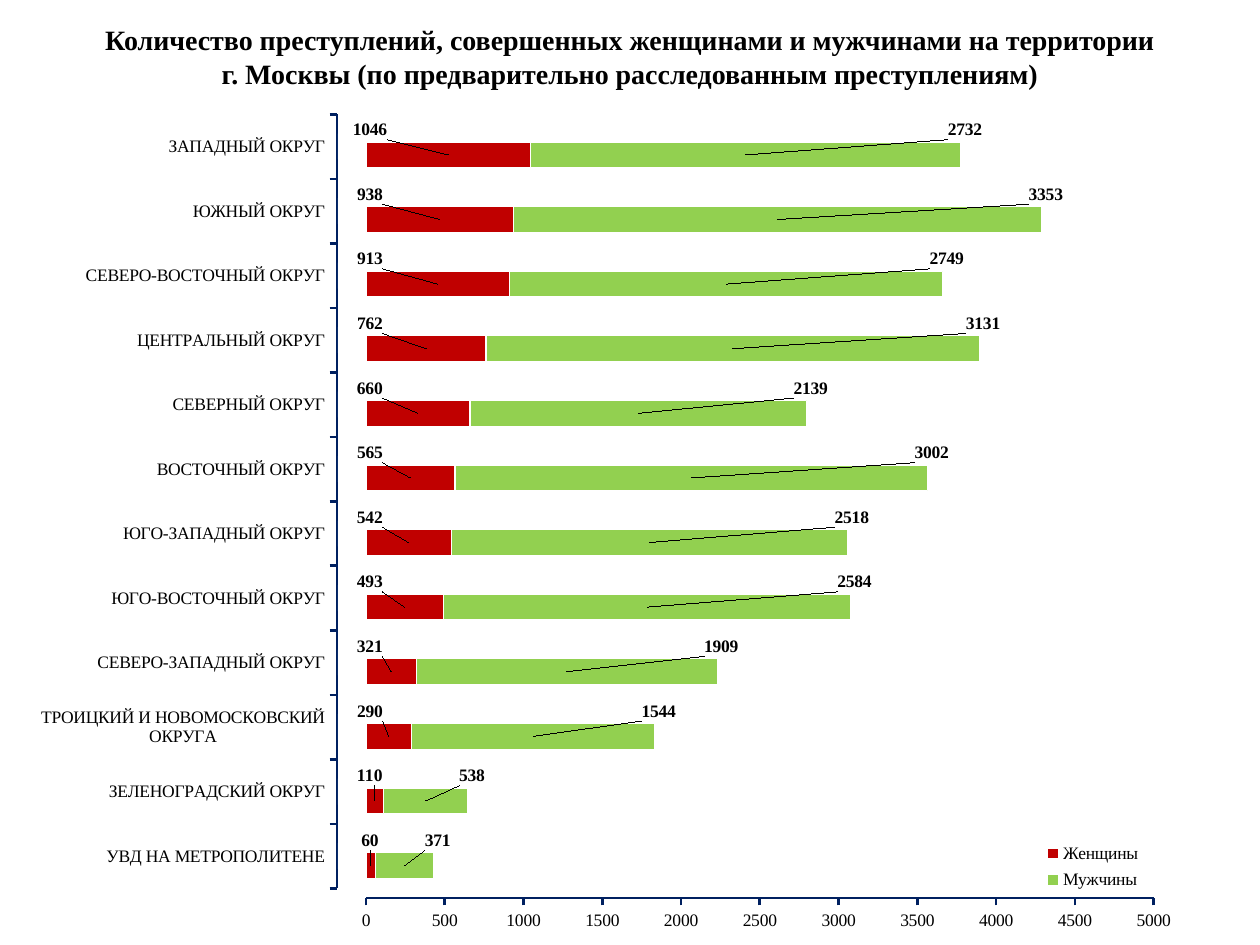
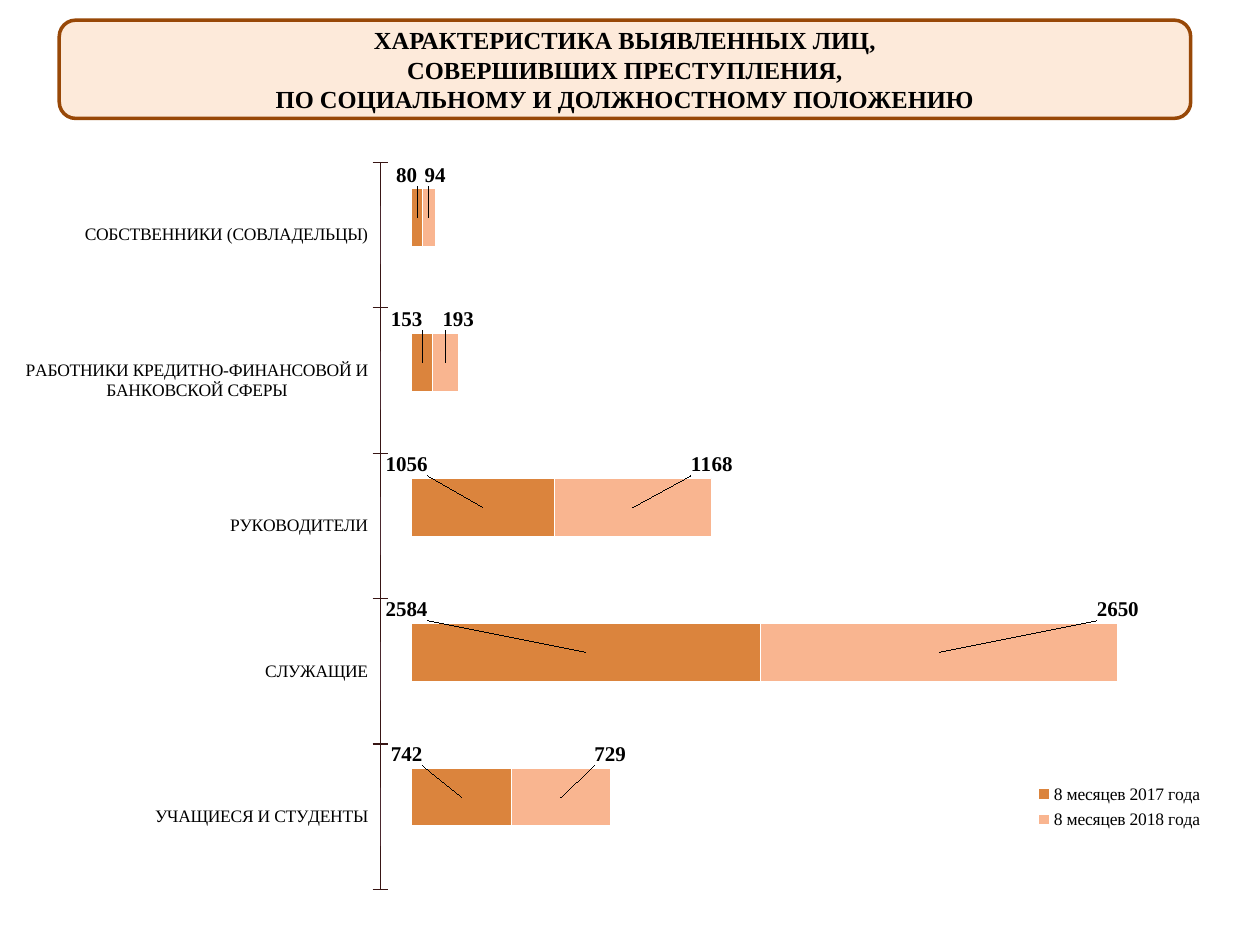
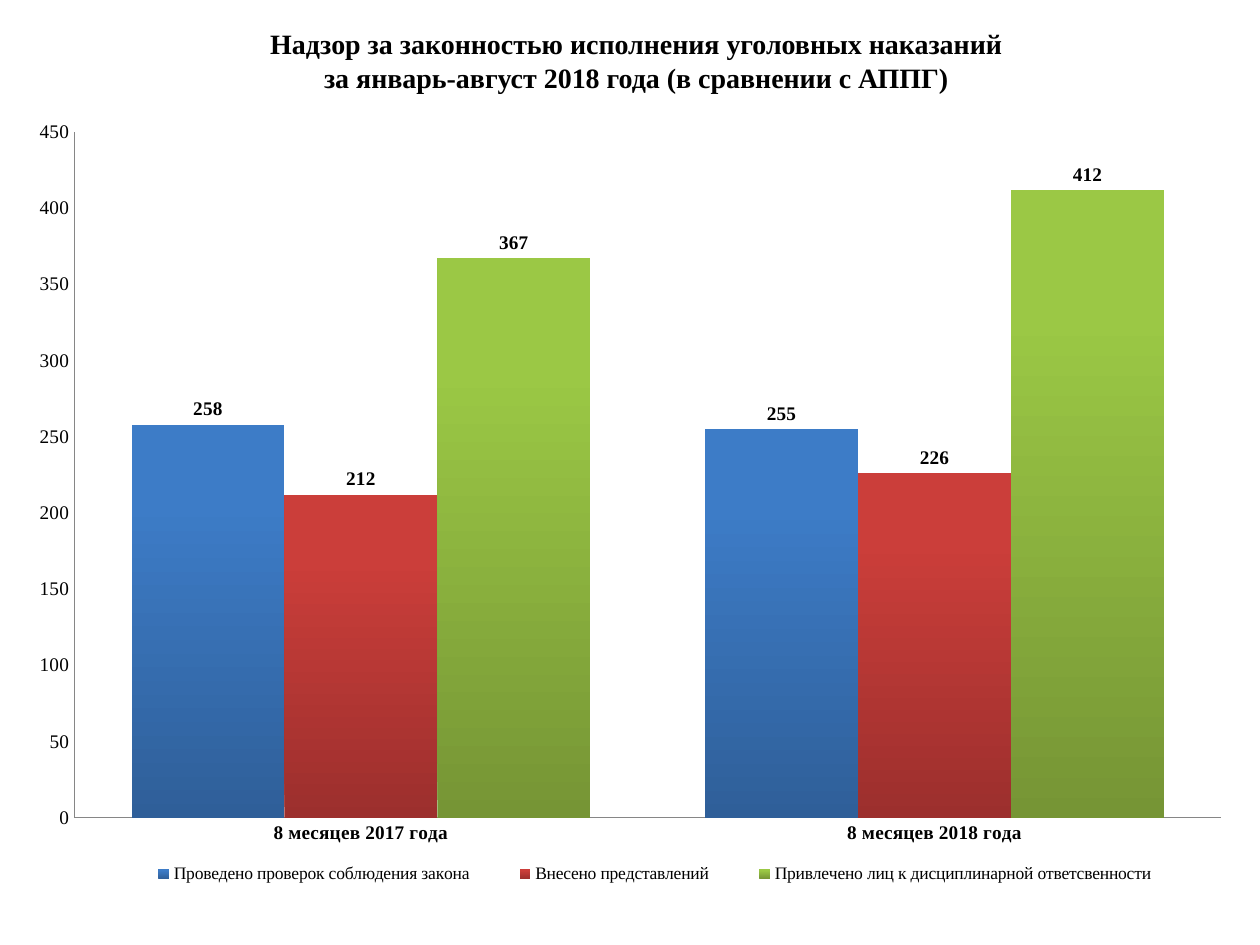
from dataclasses import dataclass

from lxml import etree
from pptx import Presentation
from pptx.chart.data import CategoryChartData
from pptx.dml.color import RGBColor
from pptx.enum.chart import XL_CHART_TYPE, XL_LABEL_POSITION, XL_LEGEND_POSITION, XL_TICK_MARK
from pptx.enum.shapes import MSO_SHAPE
from pptx.enum.text import MSO_ANCHOR, MSO_AUTO_SIZE, PP_ALIGN
from pptx.util import Pt

STACKED = XL_CHART_TYPE.BAR_STACKED
BARS = XL_CHART_TYPE.BAR_CLUSTERED
COLUMNS = XL_CHART_TYPE.COLUMN_CLUSTERED
OUT, CROSS, NO_TICK = XL_TICK_MARK.OUTSIDE, XL_TICK_MARK.CROSS, XL_TICK_MARK.NONE
RIGHT, BOTTOM = XL_LEGEND_POSITION.RIGHT, XL_LEGEND_POSITION.BOTTOM
ABOVE = XL_LABEL_POSITION.OUTSIDE_END
ROUND = MSO_SHAPE.ROUNDED_RECTANGLE
CENTER, TOP, MIDDLE = PP_ALIGN.CENTER, MSO_ANCHOR.TOP, MSO_ANCHOR.MIDDLE
NO_FIT = MSO_AUTO_SIZE.NONE

SCALE = 9144  # EMU in one px, 100 px to the inch
C = "http://schemas.openxmlformats.org/drawingml/2006/chart"
A = "http://schemas.openxmlformats.org/drawingml/2006/main"


@dataclass(frozen=True)
class Theme:
    font: str = "Times New Roman"
    ink: str = "000000"
    white: str = "FFFFFF"
    navy: str = "002060"
    brown: str = "381514"
    gray: str = "868686"
    box: str = "FDEADA"
    edge: str = "984807"
    sexes: tuple = ("C00000", "92D050")
    years: tuple = ("DB843D", "F9B590")
    acts: tuple = (("2F5F99", "3D7CC7"), ("9C2F2D", "CB3E3A"), ("769535", "9BC845"))
    title: int = 16
    head: int = 14
    large: int = 12
    mid: int = 11
    small: int = 10


def px(n):
    return round(n * SCALE)


def color(code):
    return RGBColor.from_string(code)


def layout(x, y, w=None, h=None, inner=False):
    """Manual layout: a place and size, or an offset when no size is given."""
    root = etree.Element(f"{{{C}}}layout", nsmap={"c": C})
    box = etree.SubElement(root, f"{{{C}}}manualLayout")
    vals = {"layoutTarget": "inner"} if inner else {}
    if w is None:
        vals.update(x=x, y=y)
    else:
        vals.update(xMode="edge", yMode="edge", x=x, y=y, w=w, h=h)
    for name, val in vals.items():
        etree.SubElement(box, f"{{{C}}}{name}", val=str(val))
    return root


def clear():
    """Shape properties without fill or line."""
    root = etree.Element(f"{{{C}}}spPr", nsmap={"c": C, "a": A})
    etree.SubElement(root, f"{{{A}}}noFill")
    line = etree.SubElement(root, f"{{{A}}}ln")
    etree.SubElement(line, f"{{{A}}}noFill")
    return root


class Deck:
    def __init__(self, theme):
        self.theme = theme
        self.prs = Presentation()
        self.prs.slide_width, self.prs.slide_height = px(1000), px(750)
        self.slide = None

    def add(self, kind):
        self.slide = self.prs.slides.add_slide(self.prs.slide_layouts.get_by_name(kind))

    def style(self, font, size, bold=False):
        font.name, font.size, font.bold = self.theme.font, Pt(size), bold
        font.color.rgb = color(self.theme.ink)

    def label(self, shape, text, size, anchor):
        frame = shape.text_frame
        frame.text = text
        frame.word_wrap, frame.auto_size = True, NO_FIT
        frame.vertical_anchor = anchor
        for para in frame.paragraphs:
            para.alignment = CENTER
            for run in para.runs:
                self.style(run.font, size, True)

    def title(self, text, x, y, w, h):
        self.add("Title Only")
        shape = self.slide.shapes.title
        shape.left, shape.top, shape.width, shape.height = map(px, (x, y, w, h))
        self.label(shape, text, self.theme.title, TOP)

    def box(self, text, x, y, w, h):
        shape = self.slide.shapes.add_shape(ROUND, *map(px, (x, y, w, h)))
        shape.shadow.inherit = False
        shape.fill.solid()
        shape.fill.fore_color.rgb = color(self.theme.box)
        shape.line.color.rgb = color(self.theme.edge)
        shape.line.width = Pt(2)
        self.label(shape, text, self.theme.head, MIDDLE)

    def chart(self, kind, place, area, cats, rows, gap=150):
        """Chart with a fixed plot area, no fill and both axes hidden."""
        data = CategoryChartData()
        data.categories = cats
        for name, vals in rows:
            data.add_series(name, vals)
        chart = self.slide.shapes.add_chart(kind, *map(px, place), data).chart
        chart.has_title = chart.has_legend = False
        self.style(chart.font, self.theme.small)
        plot = chart.plots[0]
        plot.gap_width, plot.vary_by_categories = gap, False
        plot.overlap = 100 if kind == STACKED else 0
        chart.value_axis.has_major_gridlines = False
        for axis in (chart.category_axis, chart.value_axis):
            axis.visible = False
        root = chart._element
        root.find(f"{{{C}}}txPr").addprevious(clear())
        zone = root.find(f".//{{{C}}}plotArea")
        for old in zone.findall(f"{{{C}}}layout"):
            zone.remove(old)
        zone.insert(0, layout(*area, inner=True))
        zone.append(clear())
        return chart

    def axis(self, axis, tick, code, width, size, bold=False):
        axis.visible = True
        axis.major_tick_mark, axis.minor_tick_mark = tick, NO_TICK
        axis.format.line.color.rgb = color(code)
        axis.format.line.width = Pt(width)
        self.style(axis.tick_labels.font, size, bold)

    def span(self, axis, top, step):
        axis.minimum_scale, axis.maximum_scale, axis.major_unit = 0, top, step

    def legend(self, chart, side, area):
        chart.has_legend = True
        key = chart.legend
        key.position, key.include_in_layout = side, False
        self.style(key.font, self.theme.small)
        key._element.find(f"{{{C}}}legendPos").addnext(layout(*area))

    def scale(self, cats, place, area, names, tick, code, width):
        """Category axis alone, carried by series of zeros."""
        kind = STACKED if len(names) > 1 else BARS
        rows = [(name, [0] * len(cats)) for name in names]
        chart = self.chart(kind, place, area, cats, rows)
        self.axis(chart.category_axis, tick, code, width, self.theme.small)
        self.span(chart.value_axis, 1, 1)

    def stack(self, place, area, rows, tints, top, step, size, shift):
        """Two-part bars; labels sit above the start and the end of each bar."""
        cats = [str(n + 1) for n in range(len(rows[0][1]))]
        chart = self.chart(STACKED, place, area, cats, rows)
        self.span(chart.value_axis, top, step)
        unit = area[2] / top
        near, far, rise = shift
        for n, (part, tint) in enumerate(zip(chart.plots[0].series, tints)):
            part.format.fill.solid()
            part.format.fill.fore_color.rgb = color(tint)
            part.format.line.color.rgb = color(self.theme.white)
            part.format.line.width = Pt(0.75)
            part.data_labels.show_value = True
            self.style(part.data_labels.font, size, True)
            for i in range(len(cats)):
                self.style(part.points[i].data_label.font, size, True)
            tags = part._element.findall(f"{{{C}}}dLbls/{{{C}}}dLbl")
            for tag, val in zip(tags, part.values):
                half = val * unit / 2
                dx = half + far / place[2] if n else near / place[2] - half
                tag.insert(1, layout(round(dx, 4), round(-rise / place[3], 4)))
        return chart


def crimes(deck):
    theme = deck.theme
    deck.title("Количество преступлений, совершенных женщинами и мужчинами на территории\n"
               "г. Москвы (по предварительно расследованным преступлениям)", 0, 13, 1000, 78)
    areas = ["УВД НА МЕТРОПОЛИТЕНЕ", "ЗЕЛЕНОГРАДСКИЙ ОКРУГ",
             "ТРОИЦКИЙ И НОВОМОСКОВСКИЙ ОКРУГА", "СЕВЕРО-ЗАПАДНЫЙ ОКРУГ",
             "ЮГО-ВОСТОЧНЫЙ ОКРУГ", "ЮГО-ЗАПАДНЫЙ ОКРУГ", "ВОСТОЧНЫЙ ОКРУГ",
             "СЕВЕРНЫЙ ОКРУГ", "ЦЕНТРАЛЬНЫЙ ОКРУГ", "СЕВЕРО-ВОСТОЧНЫЙ ОКРУГ",
             "ЮЖНЫЙ ОКРУГ", "ЗАПАДНЫЙ ОКРУГ"]
    rows = [("Женщины", [60, 110, 290, 321, 493, 542, 565, 660, 762, 913, 938, 1046]),
            ("Мужчины", [371, 538, 1544, 1909, 2584, 2518, 3002, 2139, 3131, 2749,
                         3353, 2732])]
    deck.scale(areas, (-12, 76, 1024, 644), (0.273, 0.023, 0.458, 0.954),
               ["Series 1"], OUT, theme.navy, 1.5)
    chart = deck.stack((177, 82, 767, 666), (0.148, 0.023, 0.815, 0.924), rows,
                       theme.sexes, 5000, 500, theme.small, (3, 3, 20))
    deck.axis(chart.value_axis, OUT, theme.navy, 1.5, theme.small)
    deck.legend(chart, RIGHT, (0.83, 0.875, 0.14, 0.07))


def persons(deck):
    theme = deck.theme
    deck.add("Blank")
    deck.box("ХАРАКТЕРИСТИКА ВЫЯВЛЕННЫХ ЛИЦ,\nСОВЕРШИВШИХ ПРЕСТУПЛЕНИЯ,\n"
             "ПО СОЦИАЛЬНОМУ И ДОЛЖНОСТНОМУ ПОЛОЖЕНИЮ", 47, 16, 898, 78)
    groups = ["УЧАЩИЕСЯ И СТУДЕНТЫ", "СЛУЖАЩИЕ", "РУКОВОДИТЕЛИ",
              "РАБОТНИКИ КРЕДИТНО-ФИНАНСОВОЙ И БАНКОВСКОЙ СФЕРЫ",
              "СОБСТВЕННИКИ (СОВЛАДЕЛЬЦЫ)"]
    rows = [("8 месяцев 2017 года", [742, 2584, 1056, 153, 80]),
            ("8 месяцев 2018 года", [729, 2650, 1168, 193, 94])]
    deck.scale(groups, (20, 115, 636, 605), (0.443, 0.023, 0.074, 0.954),
               ["Series 1", "Series 2"], CROSS, theme.brown, 0.75)
    chart = deck.stack((114, 107, 890, 591), (0.239, 0.014, 0.722, 0.973), rows,
                       theme.years, 6000, 1000, theme.large, (-4, 0, 34))
    deck.legend(chart, RIGHT, (0.78, 0.865, 0.18, 0.075))


def control(deck):
    theme = deck.theme
    deck.title("Надзор за законностью исполнения уголовных наказаний\v"
               "за январь-август 2018 года (в сравнении с АППГ)", 55, 16, 900, 77)
    rows = [("Проведено проверок соблюдения закона", [258, 255]),
            ("Внесено представлений", [212, 226]),
            ("Привлечено лиц к дисциплинарной ответсвенности", [367, 412])]
    chart = deck.chart(COLUMNS, (12, 84, 976, 630), (0.048, 0.033, 0.933, 0.864),
                       ["8 месяцев 2017 года", "8 месяцев 2018 года"], rows, 75)
    deck.axis(chart.category_axis, NO_TICK, theme.gray, 0.75, theme.mid, True)
    deck.axis(chart.value_axis, NO_TICK, theme.gray, 0.75, theme.mid)
    deck.span(chart.value_axis, 450, 50)
    for part, (dark, light) in zip(chart.plots[0].series, theme.acts):
        fill = part.format.fill
        fill.gradient()
        fill.gradient_angle = 90
        for stop, tint, spot in zip(fill.gradient_stops, (dark, light), (0, 0.8)):
            stop.color.rgb, stop.position = color(tint), spot
        labels = part.data_labels
        labels.show_value, labels.position = True, ABOVE
        deck.style(labels.font, theme.mid, True)
    deck.legend(chart, BOTTOM, (0.08, 0.945, 0.88, 0.045))


def main():
    deck = Deck(Theme())
    for build in (crimes, persons, control):
        build(deck)
    deck.prs.save("out.pptx")


if __name__ == "__main__":
    main()
